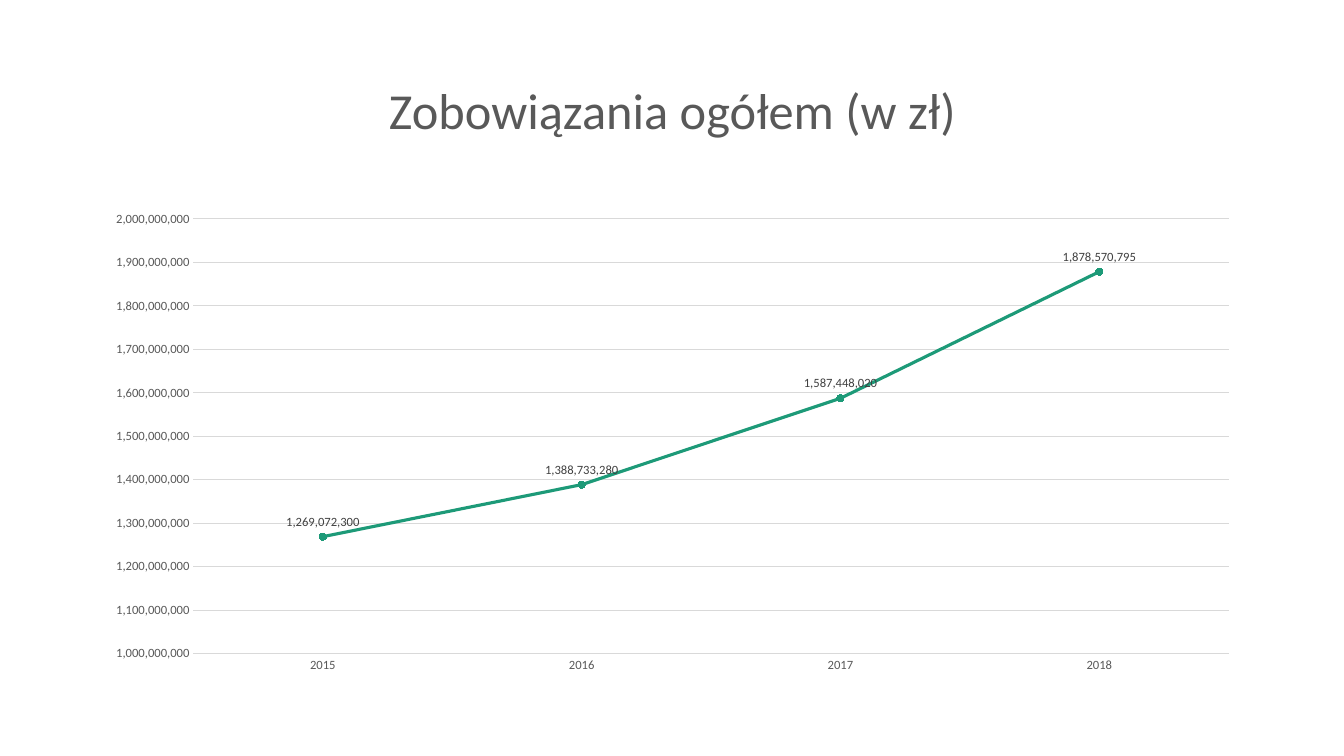
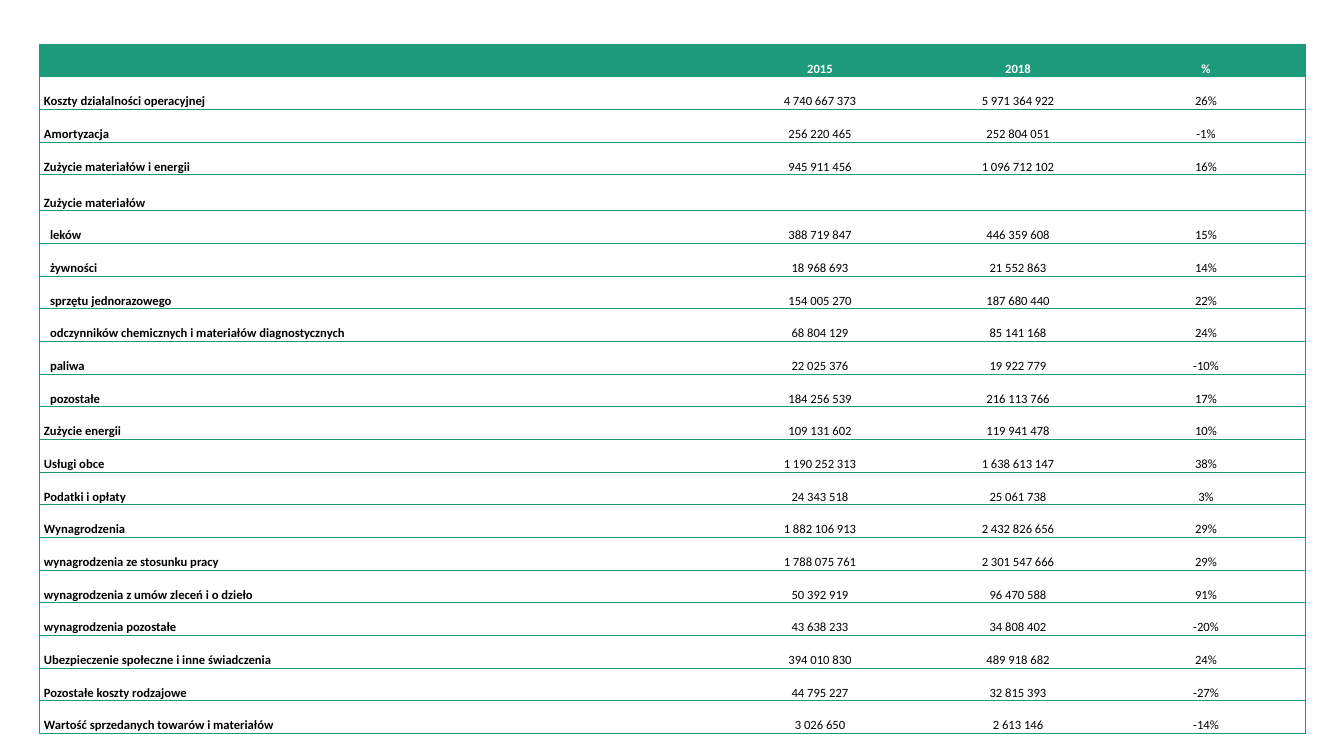
from dataclasses import dataclass

import lxml.etree
import pptx
import pptx.chart.data
import pptx.dml.color
import pptx.enum.chart
import pptx.enum.text
import pptx.oxml
import pptx.oxml.ns
import pptx.util

PX = 12192000 / 1344
PLAIN = "{2D5ABB26-0587-4C30-8999-92F81FD0307C}"
ALIGN = pptx.enum.text.PP_ALIGN
ANCHOR = pptx.enum.text.MSO_ANCHOR


@dataclass(frozen=True)
class Theme:
    face: str = "Calibri"
    green: str = "1D9A78"
    white: str = "FFFFFF"
    black: str = "000000"
    grey: str = "595959"
    dark: str = "404040"
    pale: str = "D9D9D9"
    title: int = 36
    small: int = 9
    rule: float = 0.5
    hair: float = 0.75
    curve: float = 2.25


THEME = Theme()

DEBT = {
    "2015": 1269072300,
    "2016": 1388733280,
    "2017": 1587448020,
    "2018": 1878570795,
}

HEAD = ("", "2015", "2018", "%")
COSTS = [
    ("Koszty działalności operacyjnej", "4 740 667 373", "5 971 364 922", "26%"),
    ("Amortyzacja", "256 220 465", "252 804 051", "-1%"),
    ("Zużycie materiałów i energii", "945 911 456", "1 096 712 102", "16%"),
    ("Zużycie materiałów", "", "", ""),
    ("leków", "388 719 847", "446 359 608", "15%"),
    ("żywności", "18 968 693", "21 552 863", "14%"),
    ("sprzętu jednorazowego", "154 005 270", "187 680 440", "22%"),
    ("odczynników chemicznych i materiałów diagnostycznych",
     "68 804 129", "85 141 168", "24%"),
    ("paliwa", "22 025 376", "19 922 779", "-10%"),
    ("pozostałe", "184 256 539", "216 113 766", "17%"),
    ("Zużycie energii", "109 131 602", "119 941 478", "10%"),
    ("Usługi obce", "1 190 252 313", "1 638 613 147", "38%"),
    ("Podatki i opłaty", "24 343 518", "25 061 738", "3%"),
    ("Wynagrodzenia", "1 882 106 913", "2 432 826 656", "29%"),
    ("wynagrodzenia ze stosunku pracy", "1 788 075 761", "2 301 547 666", "29%"),
    ("wynagrodzenia z umów zleceń i o dzieło", "50 392 919", "96 470 588", "91%"),
    ("wynagrodzenia pozostałe", "43 638 233", "34 808 402", "-20%"),
    ("Ubezpieczenie społeczne i inne świadczenia",
     "394 010 830", "489 918 682", "24%"),
    ("Pozostałe koszty rodzajowe", "44 795 227", "32 815 393", "-27%"),
    ("Wartość sprzedanych towarów i materiałów", "3 026 650", "2 613 146", "-14%"),
]
GROUP = 4
NESTED = range(5, 11)


def px(num):
    return pptx.util.Emu(round(num * PX))


def rgb(code):
    return pptx.dml.color.RGBColor.from_string(code)


def style(font, size, color, bold=False):
    font.name = THEME.face
    font.size = pptx.util.Pt(size)
    font.bold = bold
    font.color.rgb = rgb(color)


def stroke(line, color, width):
    line.color.rgb = rgb(color)
    line.width = pptx.util.Pt(width)


def set_title(slide, box, text):
    title = slide.shapes.title
    title.left, title.top, title.width, title.height = map(px, box)
    frame = title.text_frame
    frame.text = text
    frame.word_wrap = True
    frame.vertical_anchor = ANCHOR.MIDDLE
    para = frame.paragraphs[0]
    para.alignment = ALIGN.CENTER
    para.line_spacing = 0.9
    style(para.font, THEME.title, THEME.grey)


def add_curve(slide, box, name, points):
    """Line chart with markers and a value above each point."""
    kinds = pptx.enum.chart
    data = pptx.chart.data.CategoryChartData(number_format="#,##0")
    data.categories = list(points)
    data.add_series(name, list(points.values()))
    chart = slide.shapes.add_chart(
        kinds.XL_CHART_TYPE.LINE_MARKERS, *map(px, box), data).chart
    chart.has_title = chart.has_legend = False
    style(chart.font, THEME.small, THEME.grey)

    cats, vals = chart.category_axis, chart.value_axis
    for axis in (cats, vals):
        axis.major_tick_mark = axis.minor_tick_mark = kinds.XL_TICK_MARK.NONE
        style(axis.tick_labels.font, THEME.small, THEME.grey)
    stroke(cats.format.line, THEME.pale, THEME.hair)
    vals.format.line.fill.background()
    vals.minimum_scale, vals.maximum_scale = 1000000000, 2000000000
    vals.major_unit = 100000000
    stroke(vals.major_gridlines.format.line, THEME.pale, THEME.hair)
    vals.tick_labels.number_format = "#,##0"
    vals.tick_labels.number_format_is_linked = False

    plot = chart.plots[0]
    plot.vary_by_categories = False
    curve = plot.series[0]
    curve.smooth = False
    stroke(curve.format.line, THEME.green, THEME.curve)
    mark = curve.marker
    mark.style, mark.size = kinds.XL_MARKER_STYLE.CIRCLE, 5
    mark.format.fill.solid()
    mark.format.fill.fore_color.rgb = rgb(THEME.green)
    stroke(mark.format.line, THEME.green, THEME.hair)
    labels = curve.data_labels
    labels.show_value = True
    labels.position = kinds.XL_LABEL_POSITION.ABOVE
    labels.number_format = "#,##0"
    labels.number_format_is_linked = False
    style(labels.font, THEME.small, THEME.dark)


def add_border(cell, sides):
    """Rule the given sides, out of L, R, T and B in that order."""
    props = cell._tc.get_or_add_tcPr()
    space = pptx.oxml.ns.nsdecls("a")
    for side in sides:
        props.append(pptx.oxml.parse_xml(
            f'<a:ln{side} {space} w="{pptx.util.Pt(THEME.rule)}"><a:solidFill>'
            f'<a:srgbClr val="{THEME.green}"/></a:solidFill></a:ln{side}>'))


def fill_cell(cell, text, head, label, inset):
    cell.text = text
    cell.margin_left, cell.margin_right = px(inset), px(5)
    cell.margin_top = cell.margin_bottom = 0
    cell.vertical_anchor = ANCHOR.BOTTOM
    cell.fill.solid()
    cell.fill.fore_color.rgb = rgb(THEME.green if head else THEME.white)
    para = cell.text_frame.paragraphs[0]
    para.alignment = ALIGN.LEFT if label else ALIGN.CENTER
    para.line_spacing = 1.07
    style(para.font, THEME.small, THEME.white if head else THEME.black,
          head or label)


def add_costs(slide, box, widths, tall):
    """Cost table; the group row is tall and the others share the rest."""
    rows = [HEAD, *COSTS]
    table = slide.shapes.add_table(len(rows), len(HEAD), *map(px, box)).table
    table.horz_banding = False
    table._tbl.tblPr.find(pptx.oxml.ns.qn("a:tableStyleId")).text = PLAIN
    for col, width in zip(table.columns, widths):
        col.width = px(width)
    low = (box[3] - tall) / (len(rows) - 1)
    for y, row in enumerate(rows):
        table.rows[y].height = px(tall if y == GROUP else low)
        for x, text in enumerate(row):
            cell = table.cell(y, x)
            left = "L" if x == 0 else ""
            right = "R" if x == len(row) - 1 else ""
            add_border(cell, left + right + "TB")
            inset = 11 if x == 0 and y in NESTED else 5
            fill_cell(cell, text, y == 0, x == 0, inset)


def main():
    deck = pptx.Presentation()
    deck.slide_width, deck.slide_height = px(1344), px(756)

    slide = deck.slides.add_slide(deck.slide_layouts[5])
    set_title(slide, (93, 40, 1159, 146), "Zobowiązania ogółem (w zł)")
    add_curve(slide, (93, 202, 1159, 480), "Zobowiązania ogółem", DEBT)

    slide = deck.slides.add_slide(deck.slide_layouts[6])
    add_costs(slide, (39, 44, 1266, 690), (672, 218, 178, 198), 36)

    deck.save("out.pptx")


if __name__ == "__main__":
    main()
